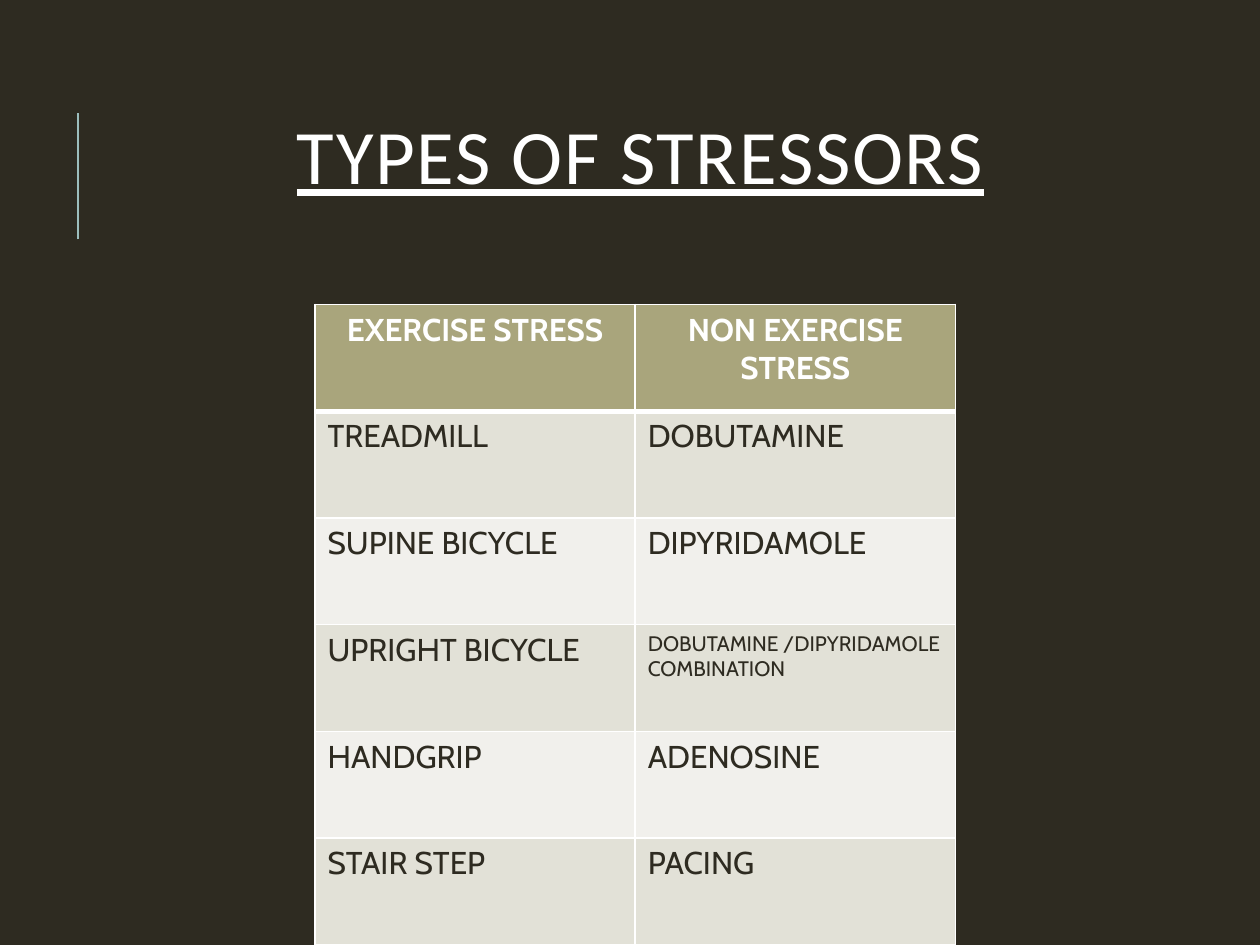
from dataclasses import dataclass

from lxml.etree import SubElement
from pptx import Presentation
from pptx.dml.color import RGBColor
from pptx.enum.shapes import MSO_CONNECTOR
from pptx.enum.text import MSO_ANCHOR, PP_ALIGN
from pptx.oxml import parse_xml
from pptx.oxml.ns import nsdecls, qn
from pptx.util import Pt


@dataclass(frozen=True)
class Theme:
    background: str = "2E2B21"
    light: str = "FFFFFF"
    accent: str = "9CBEBD"
    header: str = "A9A57C"
    bands: tuple = ("E2E1D7", "F1F0EC")
    title_font: str = "Calibri"
    body_font: str = "Cabin"
    title_size: int = 44
    body_size: int = 18
    small_size: int = 12


@dataclass(frozen=True)
class Box:
    left: float
    top: float
    width: float
    height: float

    def lengths(self):
        return [Pt(value) for value in (self.left, self.top, self.width, self.height)]


THEME = Theme()
SMALL_TEXT = "DOBUTAMINE /DIPYRIDAMOLE COMBINATION"
STRESSORS = [
    ("EXERCISE STRESS", "NON EXERCISE STRESS"),
    ("TREADMILL", "DOBUTAMINE"),
    ("SUPINE BICYCLE", "DIPYRIDAMOLE"),
    ("UPRIGHT BICYCLE", SMALL_TEXT),
    ("HANDGRIP", "ADENOSINE"),
    ("STAIR STEP", "PACING"),
]


def set_values(target, values):
    for name, value in values.items():
        setattr(target, name, value)


def write_span(para, text, color, values):
    span = para.add_run()
    span.text = text
    span.font.color.rgb = RGBColor.from_string(color)
    set_values(span.font, values)
    return span


def place_title(page, box):
    title = page.shapes.title
    title.left, title.top, title.width, title.height = box.lengths()
    set_values(title.text_frame, {"vertical_anchor": MSO_ANCHOR.MIDDLE, "word_wrap": True})
    para = title.text_frame.paragraphs[0]
    set_values(para, {"alignment": PP_ALIGN.CENTER, "line_spacing": 0.8})
    span = write_span(para, "TYPES OF STRESSORS", THEME.light, {
        "name": THEME.title_font, "size": Pt(THEME.title_size), "underline": True,
    })
    span.font._element.set("spc", "100")


def place_accent(page, box):
    line = page.shapes.add_connector(
        MSO_CONNECTOR.STRAIGHT, Pt(box.left), Pt(box.top + box.height), Pt(box.left), Pt(box.top)
    )
    line.line.color.rgb = RGBColor.from_string(THEME.accent)
    line.line.width = Pt(1.5)
    SubElement(line._element.spPr, qn("a:effectLst"))


def set_borders(cell, widths):
    properties = cell._tc.get_or_add_tcPr()
    for index, (side, width) in enumerate(widths.items()):
        properties.insert(index, parse_xml(
            f'<a:ln{side} {nsdecls("a")} w="{Pt(width)}"><a:solidFill>'
            f'<a:srgbClr val="{THEME.light}"/></a:solidFill></a:ln{side}>'
        ))


def format_cell(cell, text, row):
    is_header = row == 0
    fill = THEME.header if is_header else THEME.bands[(row - 1) % 2]
    cell.fill.solid()
    cell.fill.fore_color.rgb = RGBColor.from_string(fill)
    set_borders(cell, {
        "L": 1, "R": 1, "T": 3 if row == 1 else 1, "B": 3 if is_header else 1,
    })
    para = cell.text_frame.paragraphs[0]
    para.alignment = PP_ALIGN.CENTER if is_header else PP_ALIGN.LEFT
    size = THEME.small_size if text == SMALL_TEXT else THEME.body_size
    write_span(para, text, THEME.light if is_header else THEME.background, {
        "name": THEME.body_font, "size": Pt(size), "bold": is_header,
    })


def place_table(page, box, rows):
    table = page.shapes.add_table(len(rows), len(rows[0]), *box.lengths()).table
    for column in table.columns:
        column.width = Pt(box.width / len(rows[0]))
    for index, texts in enumerate(rows):
        table.rows[index].height = Pt(box.height / len(rows))
        for column, text in enumerate(texts):
            format_cell(table.cell(index, column), text, index)


def main():
    deck = Presentation()
    set_values(deck, {"slide_width": Pt(720), "slide_height": Pt(540)})
    page = deck.slides.add_slide(deck.slide_layouts.get_by_name("Title Only"))
    page.background.fill.solid()
    page.background.fill.fore_color.rgb = RGBColor.from_string(THEME.background)
    place_accent(page, Box(44.64, 64.8, 0, 72))
    place_title(page, Box(60, 48, 612, 90))
    place_table(page, Box(180, 174, 366, 366), STRESSORS)
    deck.save("out.pptx")


if __name__ == "__main__":
    main()
